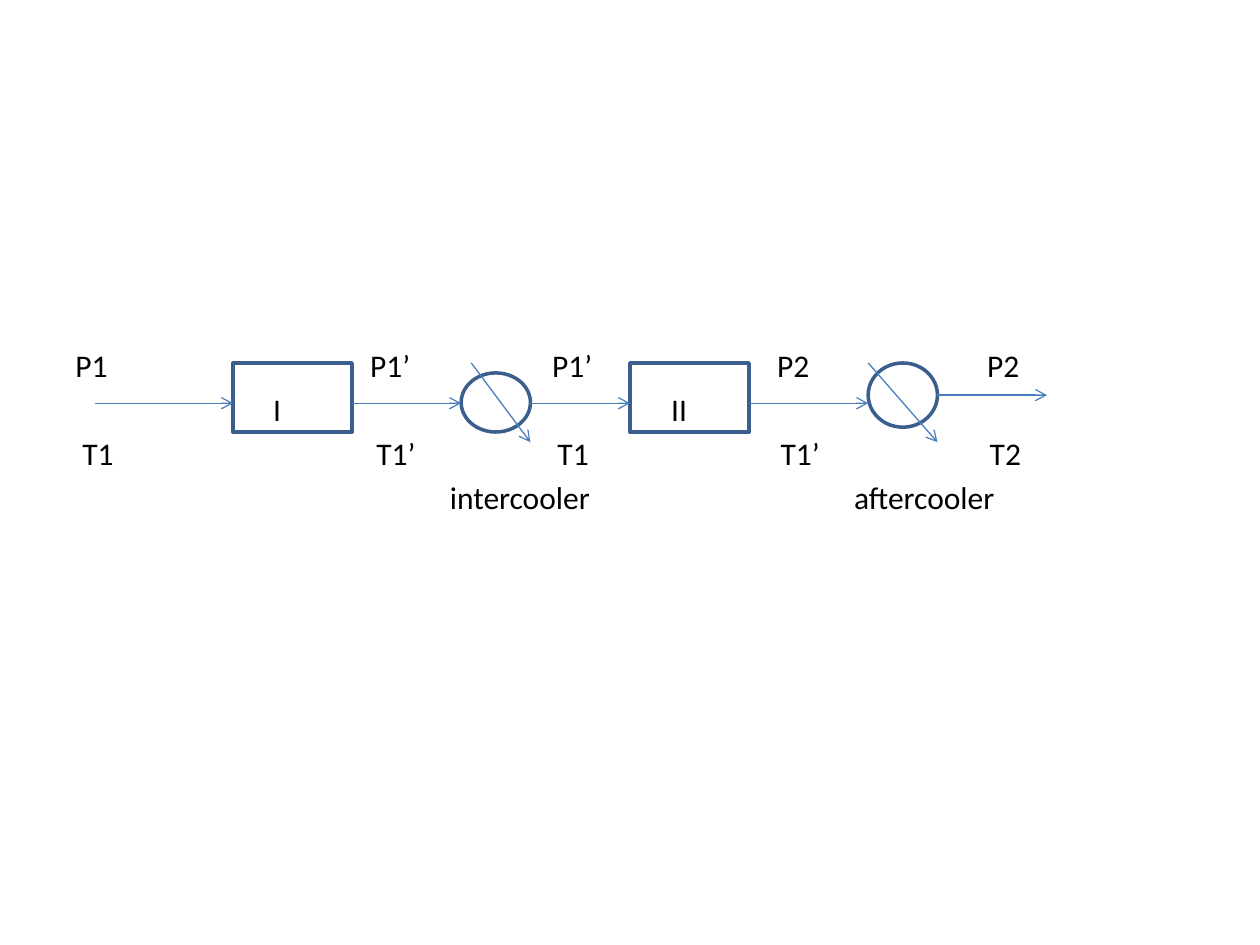
import pptx
import pptx.dml.color
import pptx.enum.shapes
import pptx.oxml.ns
import pptx.util
from lxml import etree

Pt = pptx.util.Pt
SHAPES = pptx.enum.shapes.MSO_SHAPE
qn = pptx.oxml.ns.qn


def colour(value):
    return pptx.dml.color.RGBColor.from_string(value)


class FlowSlide:
    """Style and drawing methods for one process flow slide."""

    font = "Calibri"
    size = 18
    ink = "000000"
    outline = "3A5F8C"
    stream = "4B7EBC"

    def __init__(self, slide):
        self.slide = slide

    def unit(self, kind, left, top, width, height):
        unit = self.slide.shapes.add_shape(kind, Pt(left), Pt(top), Pt(width), Pt(height))
        unit.shadow.inherit = False
        unit.fill.background()
        unit.line.color.rgb = colour(self.outline)
        unit.line.width = Pt(2)

    def arrow(self, x1, y1, x2, y2):
        arrow = self.slide.shapes.add_connector(
            pptx.enum.shapes.MSO_CONNECTOR.STRAIGHT, Pt(x1), Pt(y1), Pt(x2), Pt(y2))
        arrow.line.color.rgb = colour(self.stream)
        arrow.line.width = Pt(0.75)
        etree.SubElement(arrow.line._get_or_add_ln(), qn("a:tailEnd"), type="arrow")
        etree.SubElement(arrow._element.spPr, qn("a:effectLst"))

    def labels(self, left, top, width, height, rows):
        frame = self.slide.shapes.add_textbox(Pt(left), Pt(top), Pt(width), Pt(height)).text_frame
        frame.word_wrap = True
        for number, row in enumerate(rows):
            paragraph = frame.add_paragraph() if number else frame.paragraphs[0]
            stops = etree.SubElement(paragraph._p.get_or_add_pPr(), qn("a:tabLst"))
            for position, label in row:
                if position:
                    etree.SubElement(stops, qn("a:tab"), pos=str(Pt(position)), algn="l")
                run = paragraph.add_run()
                run.text = "\t" + label if position else label
                run.font.name = self.font
                run.font.size = Pt(self.size)
                run.font.color.rgb = colour(self.ink)
            if number:
                paragraph.space_before = Pt(0.2 * self.size)


def main():
    deck = pptx.Presentation()
    deck.slide_width, deck.slide_height = Pt(720), Pt(540)
    flow = FlowSlide(deck.slides.add_slide(deck.slide_layouts[6]))

    pressures = [(0, "P1"), (168.5, "P1’"), (272.5, "P1’"), (401, "P2"), (521, "P2")]
    stages = [(113, "I"), (340.5, "II")]
    temperatures = [(4, "T1"), (172, "T1’"), (275.5, "T1"), (403, "T1’"), (522.5, "T2")]
    coolers = [(214, "intercooler"), (445, "aftercooler")]
    flow.labels(36, 194.2, 648, 110, [pressures, stages, temperatures, coolers])

    unit_top = 207.4
    for left in (133.2, 360):
        flow.unit(SHAPES.RECTANGLE, left, unit_top, 68, 39.6)
    flow.unit(SHAPES.OVAL, 263.5, 213.1, 39.6, 33.8)
    flow.unit(SHAPES.OVAL, 496.1, unit_top, 39.6, 36.7)

    stream_y = 230.4
    for start, end in ((54, 133.2), (201.2, 263.5), (303.1, 360), (428, 496.1)):
        flow.arrow(start, stream_y, end, stream_y)
    flow.arrow(535.7, 225.8, 598.3, 225.8)
    for start, end in ((269.3, 303.1), (496.1, 535.7)):
        flow.arrow(start, unit_top, end, 252.7)

    deck.save("out.pptx")


if __name__ == "__main__":
    main()
